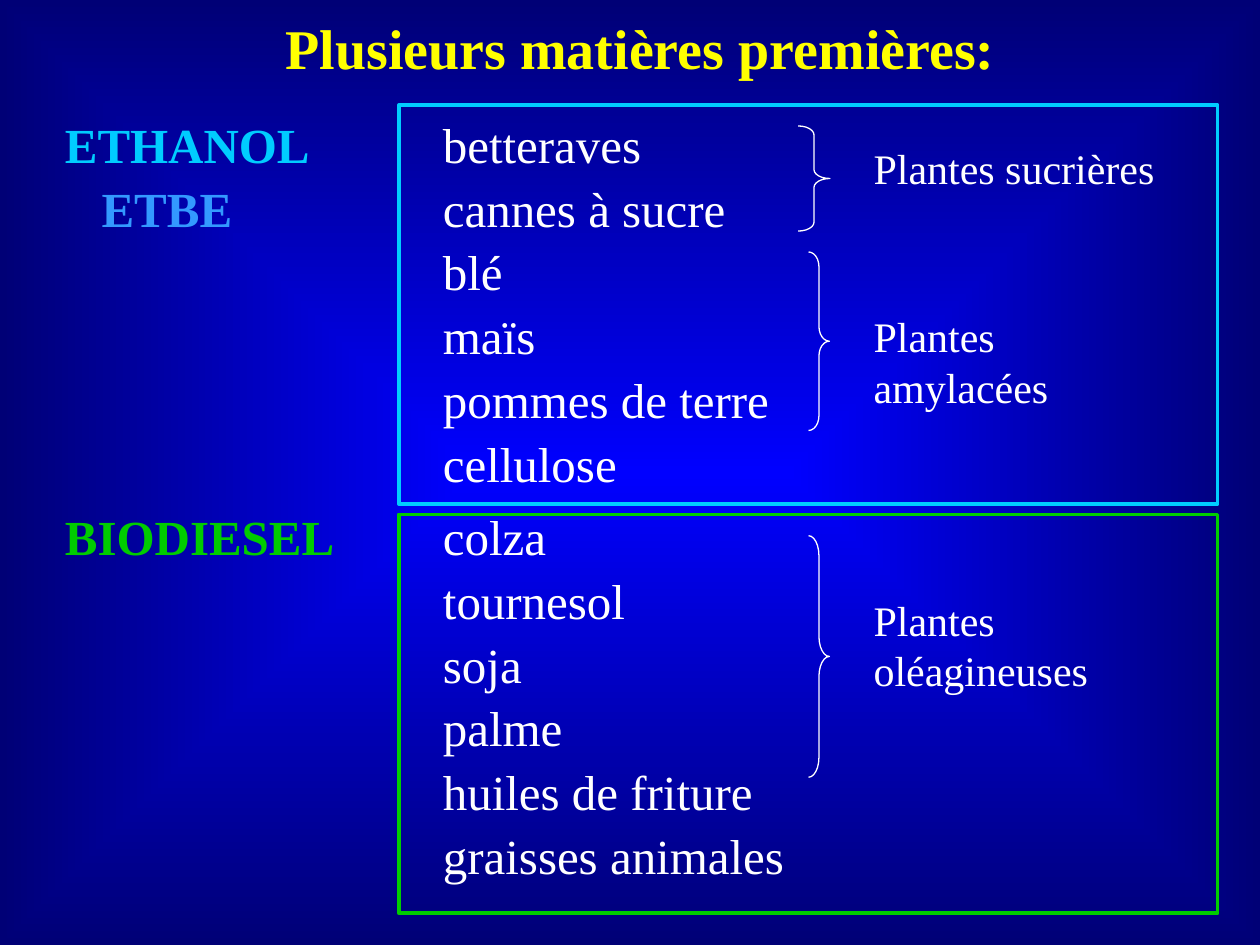
"""Build the slide on raw materials for ethanol and biodiesel."""
from lxml import etree
from pptx import Presentation
from pptx import util as u
from pptx.dml.color import RGBColor
from pptx.enum import shapes, text
from pptx.oxml.ns import qn

WHITE = RGBColor(0xFF, 0xFF, 0xFF)
YELLOW = RGBColor(0xFF, 0xFF, 0x00)
CYAN = RGBColor(0x00, 0xCC, 0xFF)
SKY = RGBColor(0x33, 0x99, 0xFF)
GREEN = RGBColor(0x00, 0xCC, 0x00)
BLUE = RGBColor(0x00, 0x00, 0xFF)
NAVY = RGBColor(0x00, 0x00, 0x76)
TAB_STEP = str(u.Cm(2.54))


def add_frame(left, top, width, height, **settings):
    box = slide.shapes.add_textbox(u.Cm(left), u.Cm(top), u.Cm(width), u.Cm(height))
    for key, value in {"word_wrap": True, **settings}.items():
        setattr(box.text_frame, key, value)
    return box.text_frame


def add_words(paragraph, words, color, **settings):
    run = paragraph.add_run()
    run.text = words
    run.font.color.rgb = color
    for key, value in {"name": "Times New Roman", "bold": False, **settings}.items():
        setattr(run.font, key, value)


deck = Presentation()
deck.slide_width, deck.slide_height = u.Cm(25.4), u.Cm(19.05)
for defaults in (deck.element, deck.slide_master.element):
    for level in defaults.xpath(".//*[@defTabSz]"):
        level.set("defTabSz", TAB_STEP)
slide = deck.slides.add_slide(deck.slide_layouts[6])

backdrop = slide.background.fill
backdrop.gradient()
for stop, color, position in zip(backdrop.gradient_stops, (BLUE, NAVY), (0, 1)):
    stop.color.rgb = color
    stop.position = position
gradient = slide.background._cSld.find(".//" + qn("a:gradFill"))
gradient.remove(gradient.find(qn("a:lin")))
spread = etree.SubElement(gradient, qn("a:path"), path="shape")
etree.SubElement(spread, qn("a:fillToRect"), l="50000", t="50000", r="50000", b="50000")

title = add_frame(2.12, -0.64, 21.59, 3.18, vertical_anchor=text.MSO_ANCHOR.MIDDLE)
title.paragraphs[0].alignment = text.PP_ALIGN.CENTER
add_words(title.paragraphs[0], "Plusieurs matières premières:", YELLOW, size=u.Pt(32), bold=True)

fit = {"auto_size": text.MSO_AUTO_SIZE.SHAPE_TO_FIT_TEXT}
fuels = {"ETHANOL": (CYAN, 2), "ETBE": (SKY, 2), "BIODIESEL": (GREEN, 1), "": (WHITE, 3)}
materials = [
    ("ETHANOL", "betteraves"), ("ETBE", "cannes à sucre"), ("", "blé"),
    ("", "maïs"), ("", "pommes de terre"), ("", "cellulose"),
    ("BIODIESEL", "colza"), ("", "tournesol"), ("", "soja"),
    ("", "palme"), ("", "huiles de friture"), ("", "graisses animales"),
]
listing = add_frame(1.06, 2.18, 22.43, 16.03, **fit)
for row, (fuel, material) in enumerate(materials):
    line = listing.add_paragraph() if row else listing.paragraphs[0]
    if row:
        line.space_before = u.Pt(8.4 if fuel == "BIODIESEL" else 2.8)
    layout = line._p.get_or_add_pPr()
    layout.set("marL", "0")
    layout.set("indent", str(u.Cm(0.74 if fuel == "ETBE" else 0)))
    layout.set("defTabSz", TAB_STEP)
    fuel_color, tab_count = fuels[fuel]
    if fuel:
        add_words(line, fuel, fuel_color, size=u.Pt(28), bold=True)
    add_words(line, "\t" * tab_count + material, WHITE, size=u.Pt(28))

RECT, BRACE = shapes.MSO_SHAPE.RECTANGLE, shapes.MSO_SHAPE.RIGHT_BRACE
outlines = [
    (RECT, 8.04, 2.12, 16.51, 8.04, CYAN, 2, None),
    (RECT, 8.04, 10.37, 16.51, 8.04, GREEN, 2, None),
    (BRACE, 16.09, 2.54, 0.64, 2.12, WHITE, 0.75, 0.28),
    (BRACE, 16.3, 5.08, 0.42, 3.6, WHITE, 0.75, 0.71),
    (BRACE, 16.3, 10.8, 0.42, 4.87, WHITE, 0.75, 0.96),
]
for preset, left, top, width, height, color, weight, curve in outlines:
    outline = slide.shapes.add_shape(preset, u.Cm(left), u.Cm(top), u.Cm(width), u.Cm(height))
    outline.shadow.inherit = False
    outline.fill.background()
    outline.line.color.rgb = color
    outline.line.width = u.Pt(weight)
    if curve:
        outline.adjustments[0] = curve

families = [
    ("Plantes sucrières", 2.75, 6.35, 1.27),
    ("Plantes amylacées", 6.14, 6.55, 2.29),
    ("Plantes oléagineuses", 11.85, 6.55, 2.29),
]
for family, top, width, height in families:
    label = add_frame(17.36, top, width, height, **fit)
    add_words(label.paragraphs[0], family, WHITE, size=u.Pt(24))

deck.save("out.pptx")
